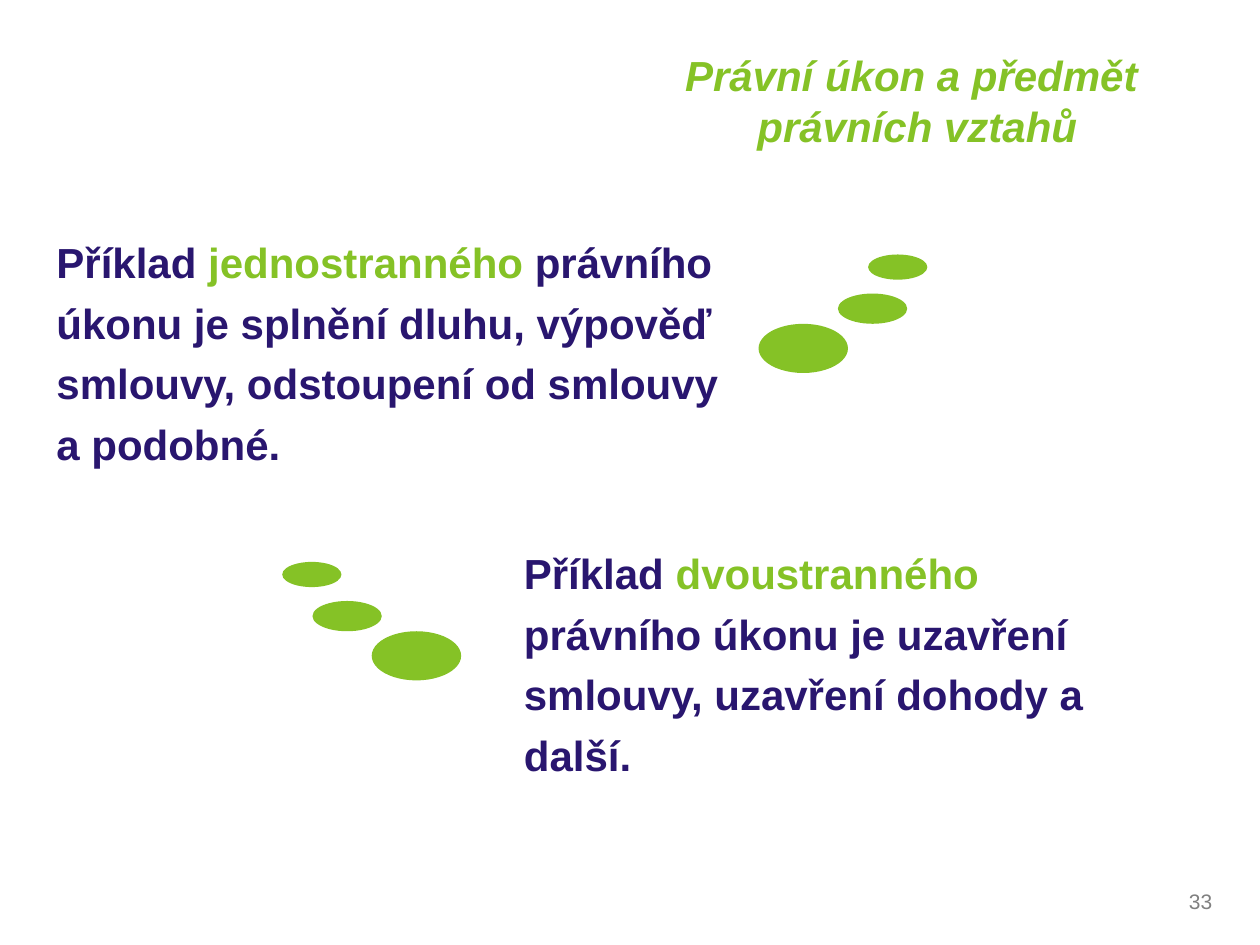
import pptx
import pptx.util
import pptx.dml.color
import pptx.enum.shapes
import pptx.enum.text

Inches = pptx.util.Inches
Pt = pptx.util.Pt
RGBColor = pptx.dml.color.RGBColor
PP_ALIGN = pptx.enum.text.PP_ALIGN
MSO_ANCHOR = pptx.enum.text.MSO_ANCHOR

GREEN = RGBColor(0x85, 0xC2, 0x26)
NAVY = RGBColor(0x29, 0x16, 0x6F)
GREY = RGBColor(0x80, 0x80, 0x80)

# Trail of ovals, smallest first: width, height, drop below the top of the trail
TRAIL_OVALS = [(0.47, 0.2, 0), (0.55, 0.24, 0.31), (0.71, 0.39, 0.55)]


def add_text(paragraph, text, color, size=24, bold=True, italic=False):
    """Add one run per line, with line breaks between them."""
    for index, line in enumerate(text.split("\n")):
        if index:
            paragraph.add_line_break()
        run = paragraph.add_run()
        run.text = line
        run.font.name = "Arial"
        run.font.size = Pt(size)
        run.font.bold = bold
        run.font.italic = italic
        run.font.color.rgb = color


def add_title(slide, text):
    title = slide.shapes.title
    title.left, title.top = Inches(4.84), Inches(0.29)
    title.width, title.height = Inches(4.88), Inches(1.01)
    frame = title.text_frame
    frame.auto_size = pptx.enum.text.MSO_AUTO_SIZE.NONE
    frame.word_wrap = False
    frame.vertical_anchor = MSO_ANCHOR.MIDDLE
    frame.paragraphs[0].alignment = PP_ALIGN.CENTER
    add_text(frame.paragraphs[0], text, GREEN, italic=True)


def add_box(slide, left, top, width, height):
    box = slide.shapes.add_textbox(
        Inches(left), Inches(top), Inches(width), Inches(height))
    box.text_frame.word_wrap = True
    return box.text_frame


def add_example(slide, place, kind, rest):
    paragraph = add_box(slide, *place).paragraphs[0]
    paragraph.line_spacing = 1.2
    add_text(paragraph, "Příklad ", NAVY)
    add_text(paragraph, kind, GREEN)
    add_text(paragraph, rest, NAVY)


def add_page_number(slide, number):
    frame = add_box(slide, 7.39, 6.95, 2.33, 0.4)
    frame.vertical_anchor = MSO_ANCHOR.MIDDLE
    frame.paragraphs[0].alignment = PP_ALIGN.RIGHT
    add_text(frame.paragraphs[0], number, GREY, size=12, bold=False)


def add_trail(slide, top, lefts):
    for left, (width, height, drop) in zip(lefts, TRAIL_OVALS):
        oval = slide.shapes.add_shape(
            pptx.enum.shapes.MSO_SHAPE.OVAL,
            Inches(left), Inches(top + drop), Inches(width), Inches(height))
        oval.shadow.inherit = False
        oval.fill.solid()
        oval.fill.fore_color.rgb = GREEN
        oval.line.fill.background()


def main():
    deck = pptx.Presentation()
    deck.slide_width, deck.slide_height = Inches(10), Inches(7.5)
    slide = deck.slides.add_slide(deck.slide_layouts[5])

    add_title(slide, "Právní úkon a předmět \nprávních vztahů")

    # Two examples of legal acts
    add_example(slide, (0.35, 1.75, 9.37, 2.08), "jednostranného",
                " právního \núkonu je splnění dluhu, výpověď \n"
                "smlouvy, odstoupení od smlouvy \na podobné.")
    add_page_number(slide, "33")
    add_example(slide, (4.06, 4.22, 5.26, 2.04), "dvoustranného",
                " právního úkonu je uzavření smlouvy, uzavření dohody a další.")

    # Trails of ovals leading to each example
    add_trail(slide, 2.02, (6.89, 6.65, 6.02))
    add_trail(slide, 4.46, (2.24, 2.48, 2.95))

    deck.save("out.pptx")


if __name__ == "__main__":
    main()
